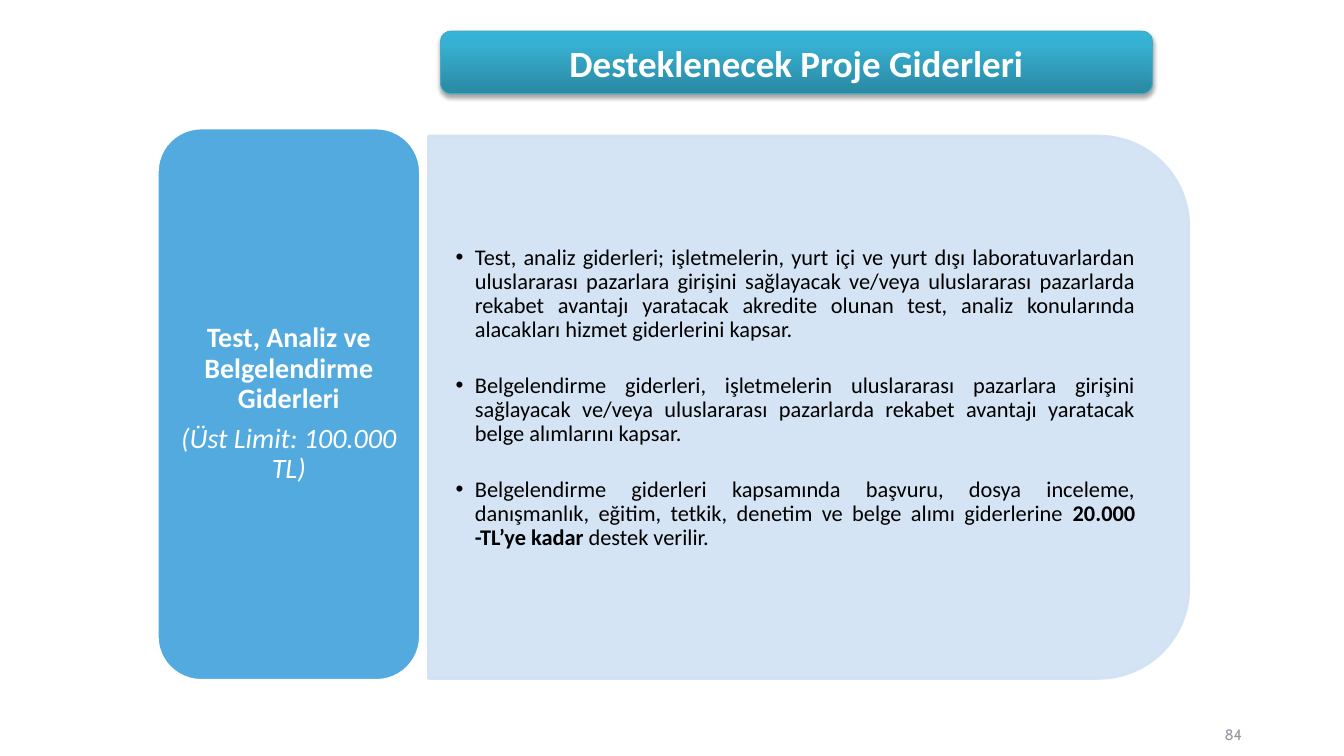
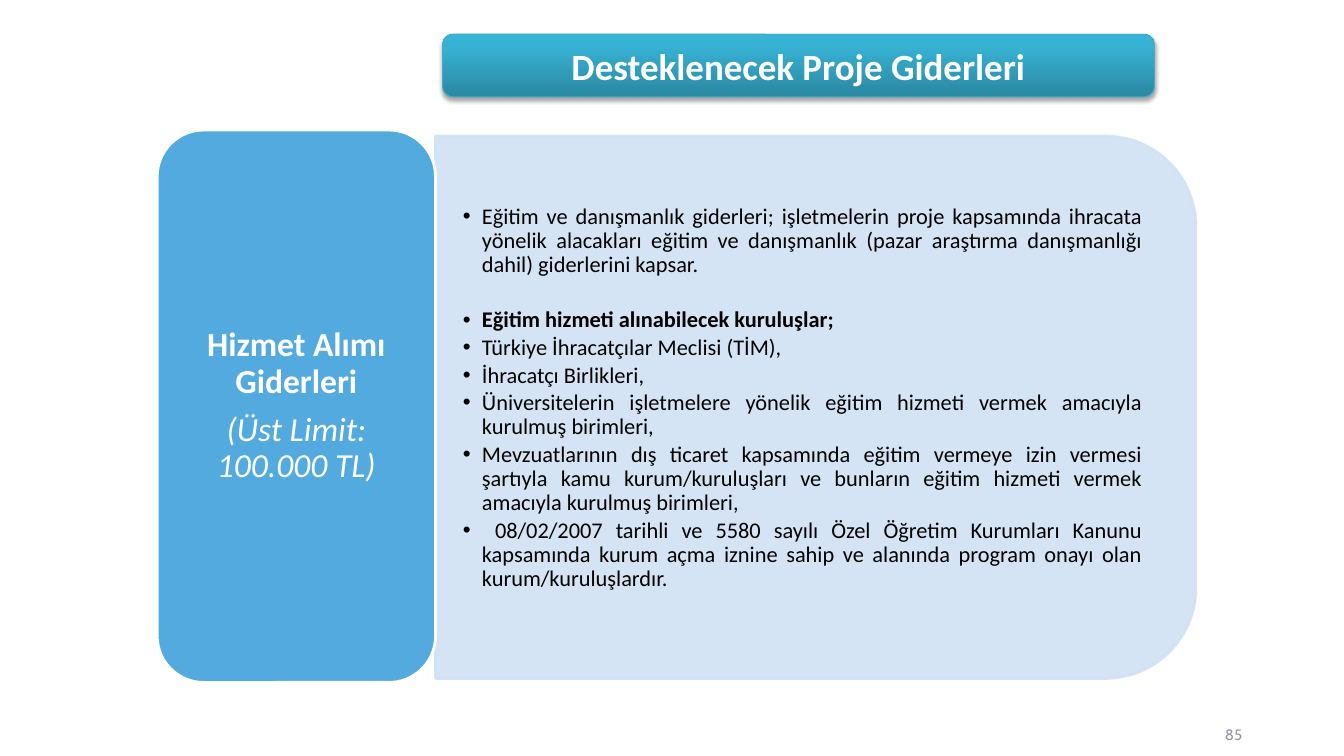
from dataclasses import dataclass

from pptx import Presentation
from pptx.dml.color import RGBColor
from pptx.enum.shapes import MSO_SHAPE
from pptx.enum.text import MSO_ANCHOR, MSO_AUTO_SIZE, PP_ALIGN
from pptx.oxml import parse_xml
from pptx.oxml.ns import nsdecls, qn
from pptx.util import Inches, Pt

ROUND_RECT = MSO_SHAPE.ROUNDED_RECTANGLE
ROUND_TWO = MSO_SHAPE.ROUND_2_SAME_RECTANGLE
MIDDLE = MSO_ANCHOR.MIDDLE
NO_FIT = MSO_AUTO_SIZE.NONE
CENTER, RIGHT, JUSTIFY = PP_ALIGN.CENTER, PP_ALIGN.RIGHT, PP_ALIGN.JUSTIFY

FONT, NUMBER_FONT = "Calibri", "Cabin"
WHITE, BLACK, GREY = "FFFFFF", "000000", "9499A1"
LABEL_BLUE, PANEL_BLUE, BANNER_EDGE = "52AADF", "D1E2F3", "46AAC5"
BANNER_STOPS = ((0, "2A88A2"), (80, "37B1D2"), (100, "34B4D6"))

TITLE = "Desteklenecek Proje Giderleri"
LIMIT = "(Üst Limit: 100.000 TL)"
PANEL_TOP, PANEL_WIDTH, PANEL_HEIGHT = 1.35, 7.54, 5.38
LABEL_LEFT = 1.56
BODY_SIZE = 16
BULLET_INDENT = 0.19
GROUP_GAP = 22.3


@dataclass(frozen=True)
class Span:
    text: str
    bold: bool = False
    italic: bool = False


@dataclass(frozen=True)
class Bullet:
    spans: tuple[Span, ...]
    ends_group: bool = False


@dataclass(frozen=True)
class ExpenseSlide:
    number: int
    heading: str
    heading_size: int
    banner_at: tuple[float, float]
    label_top: float
    label_width: float
    panel_left: float
    bullets: tuple[Bullet, ...]


def plain(text: str, ends_group: bool = False) -> Bullet:
    return Bullet((Span(text),), ends_group)


SLIDES = (
    ExpenseSlide(
        84, "Test, Analiz ve Belgelendirme Giderleri", 20,
        (4.37, 0.31), 1.27, 2.61, 4.25,
        (
            plain("Test, analiz giderleri; işletmelerin, yurt içi ve yurt dışı "
                  "laboratuvarlardan uluslararası pazarlara girişini sağlayacak "
                  "ve/veya uluslararası pazarlarda rekabet avantajı yaratacak "
                  "akredite olunan test, analiz konularında alacakları hizmet "
                  "giderlerini kapsar.", True),
            plain("Belgelendirme giderleri, işletmelerin uluslararası pazarlara "
                  "girişini sağlayacak ve/veya uluslararası pazarlarda rekabet "
                  "avantajı yaratacak belge alımlarını kapsar.", True),
            Bullet((
                Span("Belgelendirme giderleri kapsamında başvuru, dosya inceleme, "
                     "danışmanlık, eğitim, tetkik, denetim ve belge alımı "
                     "giderlerine "),
                Span("20.000 -TL’ye kadar ", bold=True),
                Span("destek verilir."),
            )),
        ),
    ),
    ExpenseSlide(
        85, "Hizmet Alımı Giderleri", 24,
        (4.39, 0.34), 1.29, 2.76, 4.32,
        (
            plain("Eğitim ve danışmanlık giderleri; işletmelerin proje kapsamında "
                  "ihracata yönelik alacakları eğitim ve danışmanlık (pazar "
                  "araştırma danışmanlığı dahil) giderlerini kapsar.", True),
            Bullet((Span("Eğitim hizmeti alınabilecek kuruluşlar;", bold=True),)),
            plain("Türkiye İhracatçılar Meclisi (TİM),"),
            plain("İhracatçı Birlikleri,"),
            plain("Üniversitelerin işletmelere yönelik eğitim hizmeti vermek "
                  "amacıyla kurulmuş birimleri,"),
            plain("Mevzuatlarının dış ticaret kapsamında eğitim vermeye izin "
                  "vermesi şartıyla kamu kurum/kuruluşları ve bunların eğitim "
                  "hizmeti vermek amacıyla kurulmuş birimleri,"),
            plain(" 08/02/2007 tarihli ve 5580 sayılı Özel Öğretim Kurumları "
                  "Kanunu kapsamında kurum açma iznine sahip ve alanında program "
                  "onayı olan kurum/kuruluşlardır."),
        ),
    ),
)


def rgb(value: str) -> RGBColor:
    return RGBColor.from_string(value)


def place(shape, left: float, top: float, width: float, height: float) -> None:
    shape.left, shape.top = Inches(left), Inches(top)
    shape.width, shape.height = Inches(width), Inches(height)


def prepare_frame(shape, side: float, top: float, bottom: float):
    frame = shape.text_frame
    frame.word_wrap = True
    frame.auto_size = NO_FIT
    frame.vertical_anchor = MIDDLE
    frame.margin_left = frame.margin_right = Inches(side)
    frame.margin_top, frame.margin_bottom = Inches(top), Inches(bottom)
    return frame


def write(paragraph, *spans: Span, size: float, color: str, align,
          font: str = FONT, line: float = 1.0, after: float = 0) -> None:
    paragraph.alignment = align
    paragraph.line_spacing = line
    paragraph.space_before, paragraph.space_after = Pt(0), Pt(after)
    for span in spans:
        run = paragraph.add_run()
        run.text = span.text
        run.font.name, run.font.size = font, Pt(size)
        run.font.bold, run.font.italic = span.bold, span.italic
        run.font.color.rgb = rgb(color)


def paragraphs(frame, count: int) -> list:
    return [frame.paragraphs[0]] + [frame.add_paragraph() for _ in range(count - 1)]


def add_block(slide, kind, box: tuple[float, float, float, float],
              fill: str, edge: str, edge_width: float):
    block = slide.shapes.add_shape(kind, *map(Inches, box))
    block.shadow.inherit = False
    block.fill.solid()
    block.fill.fore_color.rgb = rgb(fill)
    block.line.color.rgb = rgb(edge)
    block.line.width = Pt(edge_width)
    return block


def bring_to_front(slide, shape) -> None:
    slide.shapes.element.append(shape.element)


def add_banner(slide, left: float, top: float) -> None:
    box = (left, top, 7.06, 0.62)
    banner = add_block(slide, ROUND_RECT, box, BANNER_STOPS[0][1], BANNER_EDGE, 0.75)
    properties = banner.element.spPr
    stops = "".join(f'<a:gs pos="{position * 1000}"><a:srgbClr val="{color}"/></a:gs>'
                    for position, color in BANNER_STOPS)
    gradient = parse_xml(
        f'<a:gradFill {nsdecls("a")} rotWithShape="1"><a:gsLst>{stops}</a:gsLst>'
        '<a:lin ang="16200000" scaled="0"/></a:gradFill>')
    properties.replace(properties.find(qn("a:solidFill")), gradient)
    shadow = parse_xml(
        f'<a:effectLst {nsdecls("a")}><a:outerShdw blurRad="{Pt(3.1)}" '
        f'dist="{Pt(1.8)}" dir="5400000" rotWithShape="0">'
        f'<a:srgbClr val="{BLACK}"><a:alpha val="35000"/></a:srgbClr>'
        '</a:outerShdw></a:effectLst>')
    properties.replace(properties.find(qn("a:effectLst")), shadow)

    title = slide.shapes.title
    place(title, *box)
    frame = prepare_frame(title, 0.11, 0.06, 0.06)
    write(frame.paragraphs[0], Span(TITLE, bold=True),
          size=26.4, color=WHITE, align=CENTER)
    bring_to_front(slide, title)


def add_panel(slide, left: float) -> None:
    """Draw the pale panel, turned so that its round corners face right."""
    shift = (PANEL_WIDTH - PANEL_HEIGHT) / 2
    box = (left + shift, PANEL_TOP - shift, PANEL_HEIGHT, PANEL_WIDTH)
    panel = add_block(slide, ROUND_TWO, box, PANEL_BLUE, PANEL_BLUE, 2)
    panel.rotation = 90
    for color in panel.element.spPr.iter(qn("a:srgbClr")):
        color.append(parse_xml(f'<a:alpha {nsdecls("a")} val="90000"/>'))


def set_bullet(paragraph) -> None:
    properties = paragraph._p.get_or_add_pPr()
    properties.set("marL", str(Inches(BULLET_INDENT)))
    properties.set("indent", str(-Inches(BULLET_INDENT)))
    properties.append(parse_xml(f'<a:buFont {nsdecls("a")} typeface="Arial"/>'))
    properties.append(parse_xml(f'<a:buChar {nsdecls("a")} char="•"/>'))


def add_bullets(slide, left: float, bullets: tuple[Bullet, ...]) -> None:
    body = slide.placeholders[1]
    place(body, left, 1.62, 7.28, 4.85)
    frame = prepare_frame(body, 0.27, 0.14, 0.33)
    for paragraph, bullet in zip(paragraphs(frame, len(bullets)), bullets):
        set_bullet(paragraph)
        write(paragraph, *bullet.spans, size=BODY_SIZE, color=BLACK, align=JUSTIFY,
              line=0.9, after=GROUP_GAP if bullet.ends_group else 0.15 * BODY_SIZE)
    bring_to_front(slide, body)


def add_label(slide, content: ExpenseSlide) -> None:
    box = (LABEL_LEFT, content.label_top, content.label_width, 5.48)
    label = add_block(slide, ROUND_RECT, box, LABEL_BLUE, WHITE, 2)
    frame = prepare_frame(label, 0.08, 0.04, 0.04)
    spans = (Span(content.heading, bold=True), Span(LIMIT, italic=True))
    for paragraph, span in zip(paragraphs(frame, len(spans)), spans):
        write(paragraph, span, size=content.heading_size, color=WHITE, align=CENTER,
              line=0.9, after=0.35 * content.heading_size)


def add_page_number(slide, number: int) -> None:
    box = slide.shapes.add_textbox(*map(Inches, (9.29, 7.09, 3.11, 0.4)))
    frame = prepare_frame(box, 0.08, 0.04, 0.04)
    write(frame.paragraphs[0], Span(str(number)), size=10.8, color=GREY,
          align=RIGHT, font=NUMBER_FONT)


def add_expense_slide(deck, content: ExpenseSlide) -> None:
    slide = deck.slides.add_slide(deck.slide_layouts[1])
    add_page_number(slide, content.number)
    add_banner(slide, *content.banner_at)
    add_panel(slide, content.panel_left)
    add_bullets(slide, content.panel_left, content.bullets)
    add_label(slide, content)


def main() -> None:
    deck = Presentation()
    deck.slide_width, deck.slide_height = Inches(13.33), Inches(7.5)
    for content in SLIDES:
        add_expense_slide(deck, content)
    deck.save("out.pptx")


if __name__ == "__main__":
    main()
